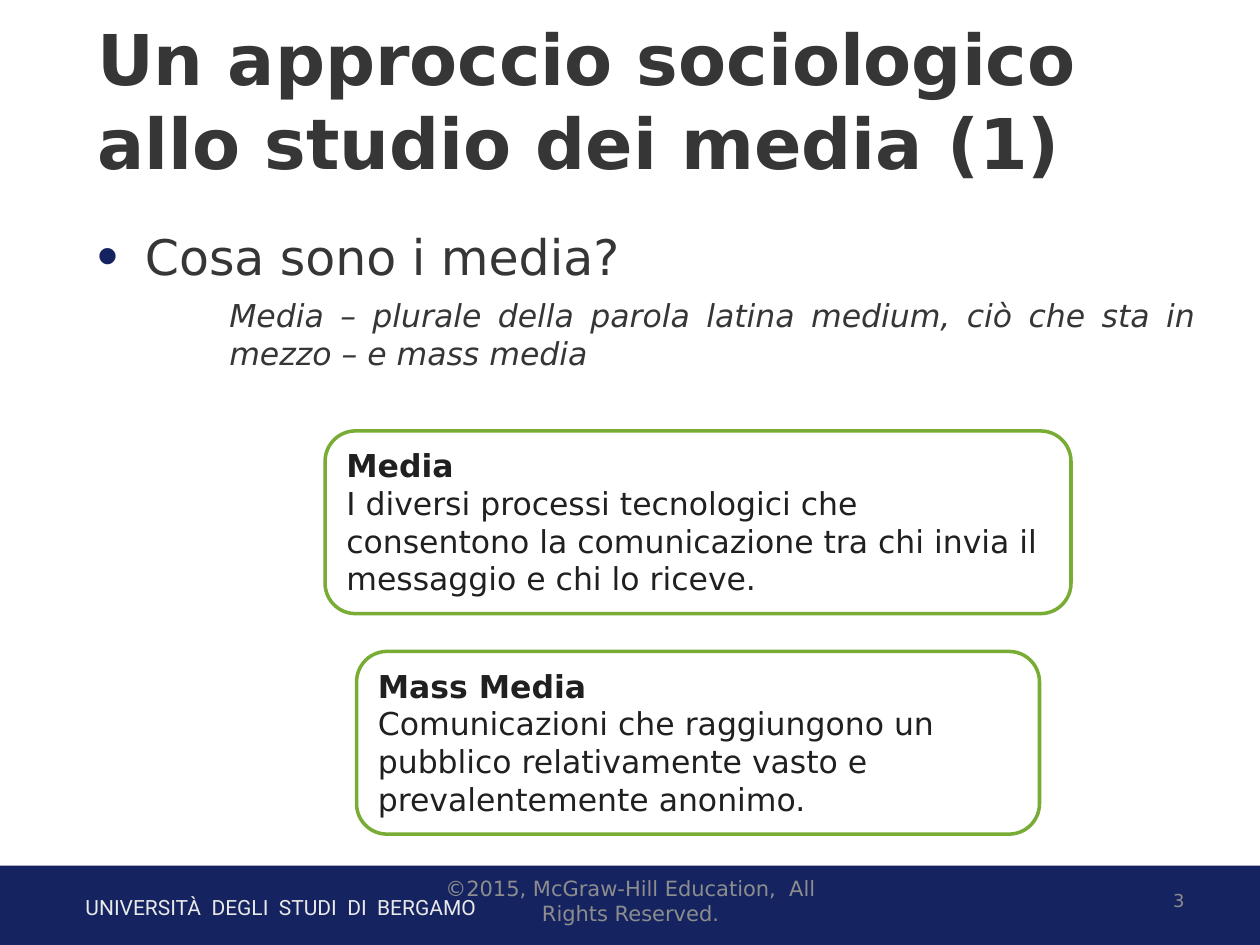
import dataclasses
import pptx
import pptx.dml.color
import pptx.enum.shapes
import pptx.enum.text
import pptx.oxml
import pptx.oxml.ns
import pptx.util
from pptx.util import Inches


@dataclasses.dataclass(frozen=True)
class Theme:
    navy: str = "152460"
    green: str = "78AC35"
    white: str = "FFFFFF"
    heading: str = "363636"
    card_text: str = "202020"
    muted: str = "8D8D8D"
    pale: str = "E9E9E9"
    font: str = "DejaVu Sans"
    brand_font: str = "Roboto"
    title_size: float = 40
    question_size: float = 28
    text_size: float = 18
    footer_size: float = 12
    number_size: float = 10.2


theme = Theme()
rgb = pptx.dml.color.RGBColor.from_string
ALIGN = pptx.enum.text.PP_ALIGN
ANCHOR = pptx.enum.text.MSO_ANCHOR
SHAPE = pptx.enum.shapes.MSO_SHAPE


def add_run(paragraph, text, size, color, font=theme.font, bold=False, italic=False):
    run = paragraph.add_run()
    run.text = text
    run.font.size = pptx.util.Pt(size)
    run.font.name = font
    run.font.color.rgb = rgb(color)
    run.font.bold = bold
    run.font.italic = italic


def set_bullet(paragraph, margin, indent, *elements):
    properties = paragraph._p.get_or_add_pPr()
    properties.set("marL", str(Inches(margin)))
    properties.set("indent", str(Inches(indent)))
    for element in elements:
        properties.append(pptx.oxml.parse_xml(
            element.replace("/>", f" {pptx.oxml.ns.nsdecls('a')}/>", 1)
            if element.endswith("/>") and element.count("<") == 1
            else element.replace(">", f" {pptx.oxml.ns.nsdecls('a')}>", 1)))


presentation = pptx.Presentation()
presentation.slide_width = Inches(10)
presentation.slide_height = Inches(7.5)
slide = presentation.slides.add_slide(presentation.slide_layouts[1])

footer_bar = slide.shapes.add_shape(
    SHAPE.RECTANGLE, Inches(0), Inches(6.87), Inches(10), Inches(0.68))
footer_bar.fill.solid()
footer_bar.fill.fore_color.rgb = rgb(theme.navy)
footer_bar.line.fill.background()
footer_bar._element.spPr.append(pptx.oxml.parse_xml(
    f'<a:effectLst {pptx.oxml.ns.nsdecls("a")}>'
    f'<a:outerShdw blurRad="{pptx.util.Pt(3.1)}" dist="{pptx.util.Pt(1.8)}"'
    ' dir="5400000" rotWithShape="0"><a:srgbClr val="000000">'
    '<a:alpha val="35000"/></a:srgbClr></a:outerShdw></a:effectLst>'))

title = slide.shapes.title
title.left, title.top = Inches(0.67), Inches(0.25)
title.width, title.height = Inches(8.92), Inches(1.08)
title.text_frame.auto_size = pptx.enum.text.MSO_AUTO_SIZE.NONE
title.text_frame.vertical_anchor = ANCHOR.MIDDLE
heading = title.text_frame.paragraphs[0]
heading.alignment = ALIGN.LEFT
add_run(heading, "Un approccio sociologico allo studio dei media (1)",
        theme.title_size, theme.heading, bold=True)

body = slide.placeholders[1]
body.left, body.top = Inches(0.67), Inches(1.75)
body.width, body.height = Inches(8.92), Inches(4.92)
body.text_frame.auto_size = pptx.enum.text.MSO_AUTO_SIZE.NONE
question = body.text_frame.paragraphs[0]
set_bullet(question, 0.38, -0.38,
           f'<a:buClr><a:srgbClr val="{theme.navy}"/></a:buClr>',
           '<a:buSzPct val="122000"/>', '<a:buChar char="•"/>')
question.space_before = pptx.util.Pt(0)
add_run(question, "Cosa sono i media?", theme.question_size, theme.heading)

definition = body.text_frame.add_paragraph()
definition.level = 2
set_bullet(definition, 1.05, 0, "<a:buNone/>")
definition.alignment = ALIGN.JUSTIFY
definition.space_before = pptx.util.Pt(6)
definition.space_after = pptx.util.Pt(6)
add_run(definition,
        "Media – plurale della parola latina medium, ciò che sta in mezzo – e mass media",
        theme.text_size, theme.heading, italic=True)

concepts = [
    (2.58, 3.42, 5.92, "Media",
     "I diversi processi tecnologici che consentono la comunicazione "
     "tra chi invia il messaggio e chi lo riceve."),
    (2.83, 5.17, 5.42, "Mass Media",
     "Comunicazioni che raggiungono un pubblico relativamente vasto "
     "e prevalentemente anonimo."),
]
for left, top, width, term, meaning in concepts:
    card = slide.shapes.add_shape(
        SHAPE.ROUNDED_RECTANGLE, Inches(left), Inches(top), Inches(width), Inches(1.45))
    card.shadow.inherit = False
    card.fill.solid()
    card.fill.fore_color.rgb = rgb(theme.white)
    card.line.color.rgb = rgb(theme.green)
    card.line.width = pptx.util.Pt(2)
    card.text_frame.word_wrap = True
    card.text_frame.vertical_anchor = ANCHOR.TOP
    term_line = card.text_frame.paragraphs[0]
    meaning_line = card.text_frame.add_paragraph()
    term_line.alignment = meaning_line.alignment = ALIGN.LEFT
    add_run(term_line, term, theme.text_size, theme.card_text, bold=True)
    add_run(meaning_line, meaning, theme.text_size, theme.card_text)

footers = [
    (0.58, 7.05, 5.82, 0.3, ANCHOR.TOP, ALIGN.LEFT, theme.footer_size, theme.pale,
     theme.brand_font, "UNIVERSITÀ  DEGLI  STUDI  DI  BERGAMO"),
    (7.17, 6.95, 2.33, 0.4, ANCHOR.MIDDLE, ALIGN.RIGHT, theme.number_size, theme.muted,
     theme.font, "3"),
    (3.42, 6.95, 3.17, 0.4, ANCHOR.MIDDLE, ALIGN.CENTER, theme.footer_size, theme.muted,
     theme.font, "©2015, McGraw-Hill Education,  All Rights Reserved."),
]
for left, top, width, height, anchor, alignment, size, color, font, text in footers:
    footer = slide.shapes.add_textbox(
        Inches(left), Inches(top), Inches(width), Inches(height))
    footer.text_frame.word_wrap = True
    footer.text_frame.vertical_anchor = anchor
    footer_line = footer.text_frame.paragraphs[0]
    footer_line.alignment = alignment
    add_run(footer_line, text, size, color, font)

presentation.save("out.pptx")
